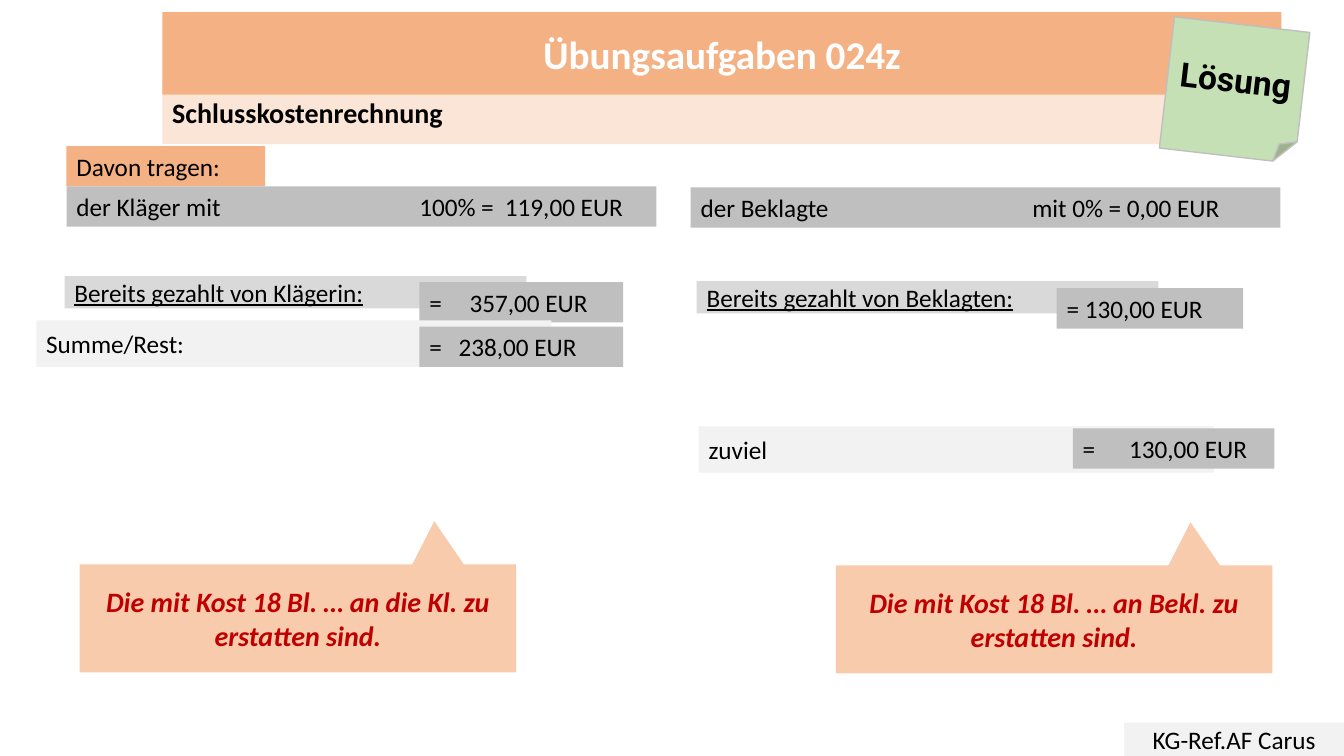
from dataclasses import dataclass

from lxml import etree
from pptx import Presentation
from pptx.dml import color
from pptx.enum import shapes, text
from pptx.oxml import ns
from pptx.util import Inches, Pt


@dataclass(frozen=True)
class Theme:
    font: str = "Calibri"
    note_font: str = "Roboto"
    black: str = "000000"
    white: str = "FFFFFF"
    red: str = "C00000"
    orange: str = "F4B183"
    peach: str = "F8CBAD"
    cream: str = "FBE5D6"
    green: str = "C5E0B4"
    pale: str = "F2F2F2"
    light: str = "D9D9D9"
    gray: str = "BFBFBF"
    body: int = 18
    emphasis: int = 20
    note: int = 24
    title: int = 28


theme = Theme()
rgb = color.RGBColor.from_string
kinds = shapes.MSO_SHAPE


def write(box, words, size=theme.body, ink=theme.black, font=theme.font, bold=False,
          italic=False, underline=False, centered=False, grow=False, tabs=()):
    frame = box.text_frame
    frame.word_wrap = True
    frame.auto_size = text.MSO_AUTO_SIZE.SHAPE_TO_FIT_TEXT if grow else text.MSO_AUTO_SIZE.NONE
    frame.vertical_anchor = text.MSO_ANCHOR.MIDDLE
    paragraph = frame.paragraphs[0]
    paragraph.alignment = text.PP_ALIGN.CENTER if centered else text.PP_ALIGN.LEFT
    run = paragraph.add_run()
    run.text = words
    style = run.font
    style.name, style.size, style.color.rgb = font, Pt(size), rgb(ink)
    style.bold, style.italic, style.underline = bold, italic, underline
    if tabs:
        stops = etree.SubElement(paragraph._p.get_or_add_pPr(), ns.qn("a:tabLst"))
        for stop in tabs:
            etree.SubElement(stops, ns.qn("a:tab"), pos=str(Inches(stop)), algn="l")


def block(left, top, width, height, fill, kind=kinds.RECTANGLE):
    box = slide.shapes.add_shape(kind, Inches(left), Inches(top), Inches(width), Inches(height))
    box.shadow.inherit = False
    box.fill.solid()
    box.fill.fore_color.rgb = rgb(fill)
    box.line.fill.background()
    return box


deck = Presentation()
deck.slide_width, deck.slide_height = Inches(13.33), Inches(7.5)
slide = deck.slides.add_slide(deck.slide_layouts[5])

subtitle = block(1.61, 0.79, 11.1, 0.64, theme.cream)
write(subtitle, "Schlusskostenrechnung", size=theme.emphasis, bold=True)

heading = slide.shapes.title
heading.left, heading.top = Inches(1.61), Inches(0.12)
heading.width, heading.height = Inches(11.1), Inches(0.82)
outline = etree.SubElement(heading._element.spPr, ns.qn("a:prstGeom"), prst="roundRect")
etree.SubElement(outline, ns.qn("a:avLst"))
heading.fill.solid()
heading.fill.fore_color.rgb = rgb(theme.orange)
write(heading, "Übungsaufgaben 024z", size=theme.title, ink=theme.white, bold=True, centered=True)
subtitle._element.addnext(heading._element)

solution = block(11.57, 0.24, 1.35, 1.31, theme.green, kinds.FOLDED_CORNER)
solution.rotation = 6.6
solution.line.color.rgb = rgb(theme.gray)
solution.line.width = Pt(1)
write(solution, "Lösung", size=theme.note, font=theme.note_font, bold=True, centered=True)

write(block(0.66, 1.45, 1.97, 0.4, theme.orange), "Davon tragen:", grow=True)

for left, top, share, tabs in (
    (0.66, 1.85, "der Kläger mit\t100% =\t119,00 EUR", (3.4, 4.25)),
    (6.85, 1.86, "der Beklagte\tmit 0% = 0,00 EUR", (3.29,)),
):
    write(block(left, top, 5.85, 0.4, theme.gray), share, grow=True, tabs=tabs)

for left, top, payer in (
    (0.64, 2.74, "Bereits gezahlt von Klägerin:"),
    (6.91, 2.79, "Bereits gezahlt von Beklagten:"),
):
    write(block(left, top, 4.58, 0.32, theme.light), payer, underline=True)

paid = (
    (4.16, 2.8, 2.02, "=\t357,00 EUR", 0.4),
    (10.48, 2.86, 1.85, "= 130,00 EUR", None),
)
balance = (
    (4.16, 3.24, 2.02, "=\t238,00 EUR", 0.29),
    (10.64, 4.25, 2, "=\t130,00 EUR", 0.46),
)
balance_labels = ((0.36, 3.18, "Summe/Rest:"), (6.93, 4.23, "zuviel"))
for amounts, labels in ((paid, ()), (balance, balance_labels)):
    for left, top, label in labels:
        write(block(left, top, 5.11, 0.46, theme.pale), label)
    for left, top, width, amount, tab in amounts:
        write(block(left, top, width, 0.4, theme.gray), amount, grow=True, tabs=(tab,) if tab else ())

for left, top, refund in (
    (0.79, 5.6, "Die mit Kost 18 Bl. … an die Kl. zu erstatten sind."),
    (8.29, 5.61, "Die mit Kost 18 Bl. … an Bekl. zu erstatten sind."),
):
    pointer = block(left + 3.04, top - 0.43, 1.01, 0.85, theme.peach, kinds.ISOSCELES_TRIANGLE)
    pointer.rotation = 356.3
    write(block(left, top, 4.33, 1.07, theme.peach), refund, size=theme.emphasis,
          ink=theme.red, bold=True, italic=True, centered=True)

write(block(11.15, 7.17, 2.18, 0.33, theme.pale), "KG-Ref.AF Carus", centered=True)

deck.save("out.pptx")
